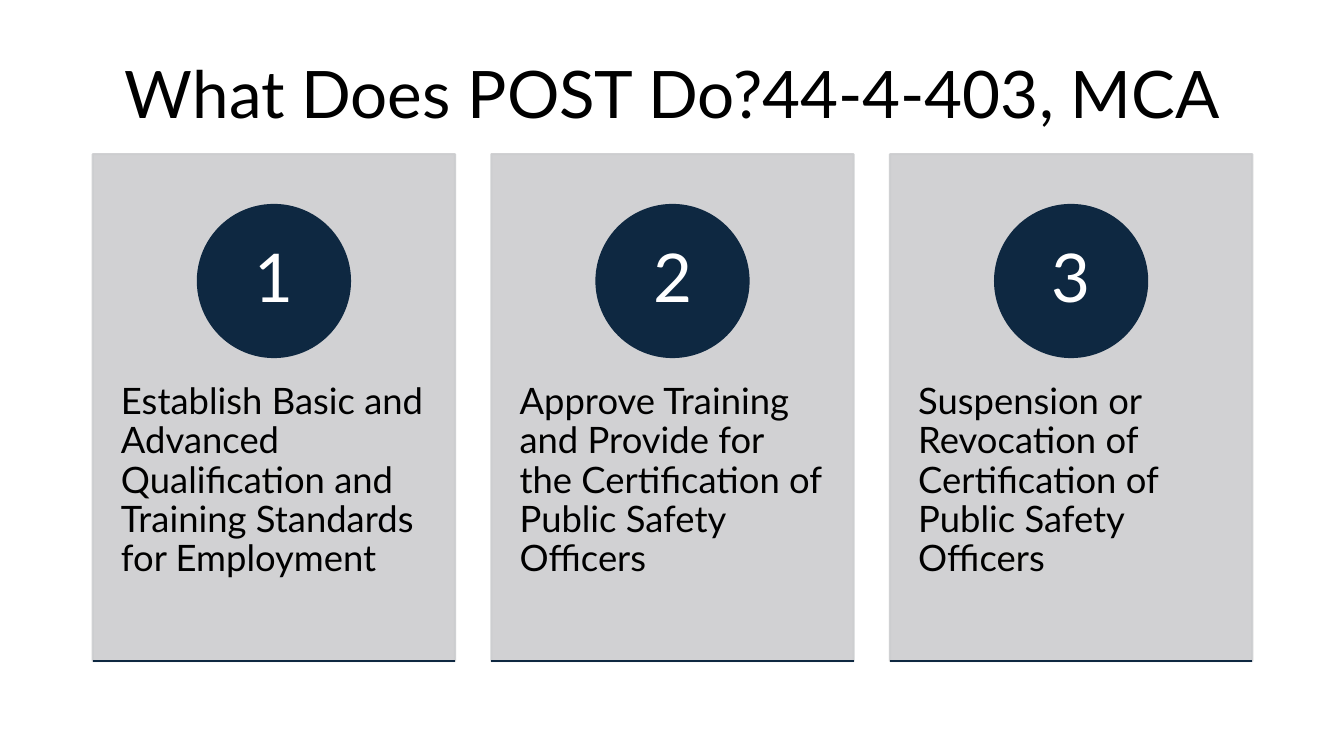
from pptx import Presentation
from pptx.dml.color import RGBColor
from pptx.enum.shapes import MSO_CONNECTOR, MSO_SHAPE
from pptx.enum.text import MSO_ANCHOR, PP_ALIGN
from pptx.oxml.ns import qn
from pptx.util import Inches, Pt
from lxml.etree import SubElement

COLORS = {"panel": "CCCDCF", "navy": "0E2841", "text": "000000", "number": "FFFFFF"}
FONT = "Lato"
SLIDE_WIDTH, SLIDE_HEIGHT = 13.33, 7.5

# Column grid
MARGIN, CONTENT_WIDTH = 0.92, 11.5
GAP = 0.36
CARD_TOP, CARD_HEIGHT = 1.53, 5.03

DUTIES = [
    "Establish Basic and Advanced Qualification and Training Standards for Employment",
    "Approve Training and Provide for the Certification of Public Safety Officers",
    "Suspension or Revocation of Certification of Public Safety Officers",
]


def color(name):
    return RGBColor.from_string(COLORS[name])


def add_text(slide, box, text, size, name="text", align=PP_ALIGN.LEFT,
             anchor=MSO_ANCHOR.TOP, insets=(0.1, 0.05)):
    frame = slide.shapes.add_textbox(*map(Inches, box)).text_frame
    frame.word_wrap = True
    frame.vertical_anchor = anchor
    frame.margin_left = frame.margin_right = Inches(insets[0])
    frame.margin_top = frame.margin_bottom = Inches(insets[1])
    paragraph = frame.paragraphs[0]
    paragraph.alignment = align
    paragraph.line_spacing = 0.9
    run = paragraph.add_run()
    run.text = text
    run.font.name = FONT
    run.font.size = Pt(size)
    run.font.color.rgb = color(name)


def add_filled_shape(slide, kind, box, name, opacity=100):
    shape = slide.shapes.add_shape(kind, *map(Inches, box))
    shape.shadow.inherit = False
    shape.fill.solid()
    shape.fill.fore_color.rgb = color(name)
    shape.line.color.rgb = color(name)
    shape.line.width = Pt(1.5)
    if opacity < 100:
        for element in shape._element.spPr.iter(qn("a:srgbClr")):
            SubElement(element, qn("a:alpha")).set("val", str(opacity * 1000))


def add_rule(slide, left, top, width):
    rule = slide.shapes.add_connector(
        MSO_CONNECTOR.STRAIGHT, *map(Inches, (left, top, left + width, top)))
    rule.line.color.rgb = color("navy")
    rule.line.width = Pt(1.5)
    SubElement(rule._element.spPr, qn("a:effectLst"))


def add_title(slide, box):
    add_text(slide, box, "What Does POST Do?44-4-403, MCA", 46.8,
             align=PP_ALIGN.CENTER, anchor=MSO_ANCHOR.MIDDLE)


def add_card(slide, box, number, duty):
    left, top, width, height = box
    # Panel and its description
    add_filled_shape(slide, MSO_SHAPE.RECTANGLE, box, "panel", opacity=90)
    add_text(slide, (left, top + 0.38 * height, width, 0.6 * height), duty, 26,
             insets=(0.28, 0.36))
    # Numbered circle, centred in the panel
    diameter = 0.3 * height
    circle_left, circle_top = left + (width - diameter) / 2, top + 0.1 * height
    circle = (circle_left, circle_top, diameter, diameter)
    add_filled_shape(slide, MSO_SHAPE.OVAL, circle, "navy")
    inset = 0.22
    side = diameter - 2 * inset
    add_text(slide, (circle_left + inset, circle_top + inset, side, side), str(number), 48,
             name="number", align=PP_ALIGN.CENTER, anchor=MSO_ANCHOR.MIDDLE,
             insets=(0.12, 0.01))
    # Rule along the bottom edge
    add_rule(slide, left, top + height, width)


def add_cards(slide, box):
    left, top, width, height = box
    card_width = (width - GAP * (len(DUTIES) - 1)) / len(DUTIES)
    for index, duty in enumerate(DUTIES):
        card_left = left + index * (card_width + GAP)
        add_card(slide, (card_left, top, card_width, height), index + 1, duty)


def main():
    presentation = Presentation()
    presentation.slide_width = Inches(SLIDE_WIDTH)
    presentation.slide_height = Inches(SLIDE_HEIGHT)
    slide = presentation.slides.add_slide(presentation.slide_layouts[6])
    add_title(slide, (MARGIN, 0.61, CONTENT_WIDTH, 0.72))
    add_cards(slide, (MARGIN, CARD_TOP, CONTENT_WIDTH, CARD_HEIGHT))
    presentation.save("out.pptx")


if __name__ == "__main__":
    main()
